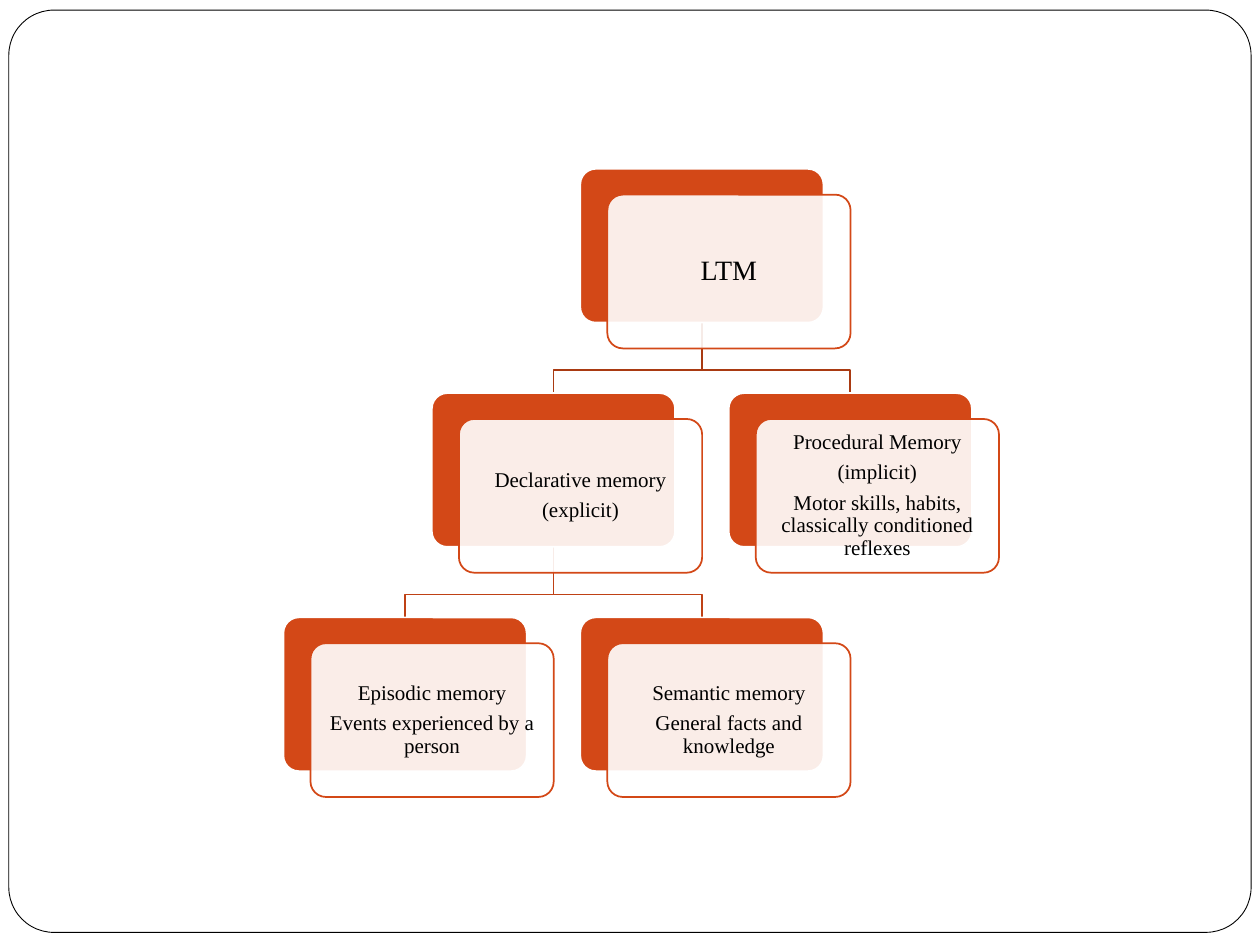
from lxml import etree
from pptx import Presentation
from pptx.dml.color import RGBColor
from pptx.enum.shapes import MSO_SHAPE
from pptx.enum.text import MSO_ANCHOR, PP_ALIGN
from pptx.oxml.ns import qn
from pptx.util import Inches, Pt

ROUND = MSO_SHAPE.ROUNDED_RECTANGLE
MIDDLE = MSO_ANCHOR.MIDDLE
CENTER = PP_ALIGN.CENTER

# Grid of the tree, in inches
LEFT, TOP = 2.25, 1.34
COL, ROW = 1.178, 1.78
WIDE, HIGH = 1.93, 1.22
SHIFT_X, SHIFT_Y = 0.215, 0.205
BEND = 0.38

# name: (column, row, parent, lines, text size, inset)
NODES = {
    "ltm": (2, 0, None, ["LTM"], 16, 0.07),
    "declare": (1, 1, "ltm", ["Declarative memory", "(explicit)"], 12, 0.05),
    "episode": (0, 2, "declare",
                ["Episodic memory", "Events experienced by a person"], 12, 0.05),
    "meaning": (2, 2, "declare",
                ["Semantic memory", "General facts and knowledge"], 12, 0.05),
    "skill": (3, 1, "ltm",
              ["Procedural Memory", "(implicit)",
               "Motor skills, habits, classically conditioned reflexes"], 12, 0.05),
}


def color(code):
    return RGBColor.from_string(code)


def write(shape, lines, size=12, inset=0.05, font="Times New Roman", ink="000000"):
    frame = shape.text_frame
    frame.word_wrap = True
    frame.vertical_anchor = MIDDLE
    frame.margin_left = frame.margin_right = Inches(inset)
    frame.margin_top = frame.margin_bottom = Inches(inset)
    for i, line in enumerate(lines):
        para = frame.paragraphs[0] if i == 0 else frame.add_paragraph()
        para.alignment = CENTER
        para.line_spacing = 0.9
        para.space_after = Pt(0.35 * size)
        run = para.add_run()
        run.text = line
        run.font.name = font
        run.font.size = Pt(size)
        run.font.color.rgb = color(ink)


class Tree:
    """Draws a tree of stacked cards on one slide."""

    accent, paper = "D34817", "FFFFFF"
    links = ["A93A12", "BF4115"]

    def __init__(self, slide):
        self.shapes = slide.shapes

    def panel(self, x, y, w, h, fill, line, width=1, bend=0.1, alpha=None):
        shape = self.shapes.add_shape(ROUND, *map(Inches, (x, y, w, h)))
        shape.adjustments[0] = bend
        shape.shadow.inherit = False
        shape.fill.solid()
        shape.fill.fore_color.rgb = color(fill)
        shape.line.color.rgb = color(line)
        shape.line.width = Pt(width)
        if alpha is not None:
            tone = shape.fill._xPr.find(qn("a:solidFill"))[0]
            etree.SubElement(tone, qn("a:alpha"), val=str(alpha * 1000))
        return shape

    def card(self, col, row, lines, size, inset):
        x, y = LEFT + col * COL, TOP + row * ROW
        self.panel(x, y, WIDE, HIGH, self.accent, self.paper)
        front = self.panel(x + SHIFT_X, y + SHIFT_Y, WIDE, HIGH,
                           self.paper, self.accent, alpha=90)
        write(front, lines, size=size, inset=inset)

    def link(self, start, end, row):
        """Joins a card in the given row to one in the row below."""
        x1, x2 = (LEFT + col * COL + WIDE / 2 for col in (start, end))
        y1, y2 = TOP + row * ROW + HIGH, TOP + (row + 1) * ROW
        mid = y1 + BEND
        pen = self.shapes.build_freeform(Inches(x1), Inches(y1))
        pen.add_line_segments(
            [(Inches(x), Inches(y)) for x, y in ((x1, mid), (x2, mid), (x2, y2))],
            close=False)
        shape = pen.convert_to_shape()
        shape.shadow.inherit = False
        shape.fill.background()
        shape.line.color.rgb = color(self.links[row])
        shape.line.width = Pt(1)


def main():
    deck = Presentation()
    deck.slide_width, deck.slide_height = Inches(10), Inches(7.5)
    tree = Tree(deck.slides.add_slide(deck.slide_layouts[6]))
    tree.panel(0.07, 0.08, 9.86, 7.32, "FFFFFF", "000000", width=0.5, bend=0.049)
    for col, row, parent, *rest in NODES.values():
        if parent:
            tree.link(NODES[parent][0], col, row - 1)
    for col, row, parent, *rest in NODES.values():
        tree.card(col, row, *rest)
    deck.save("out.pptx")


if __name__ == "__main__":
    main()
